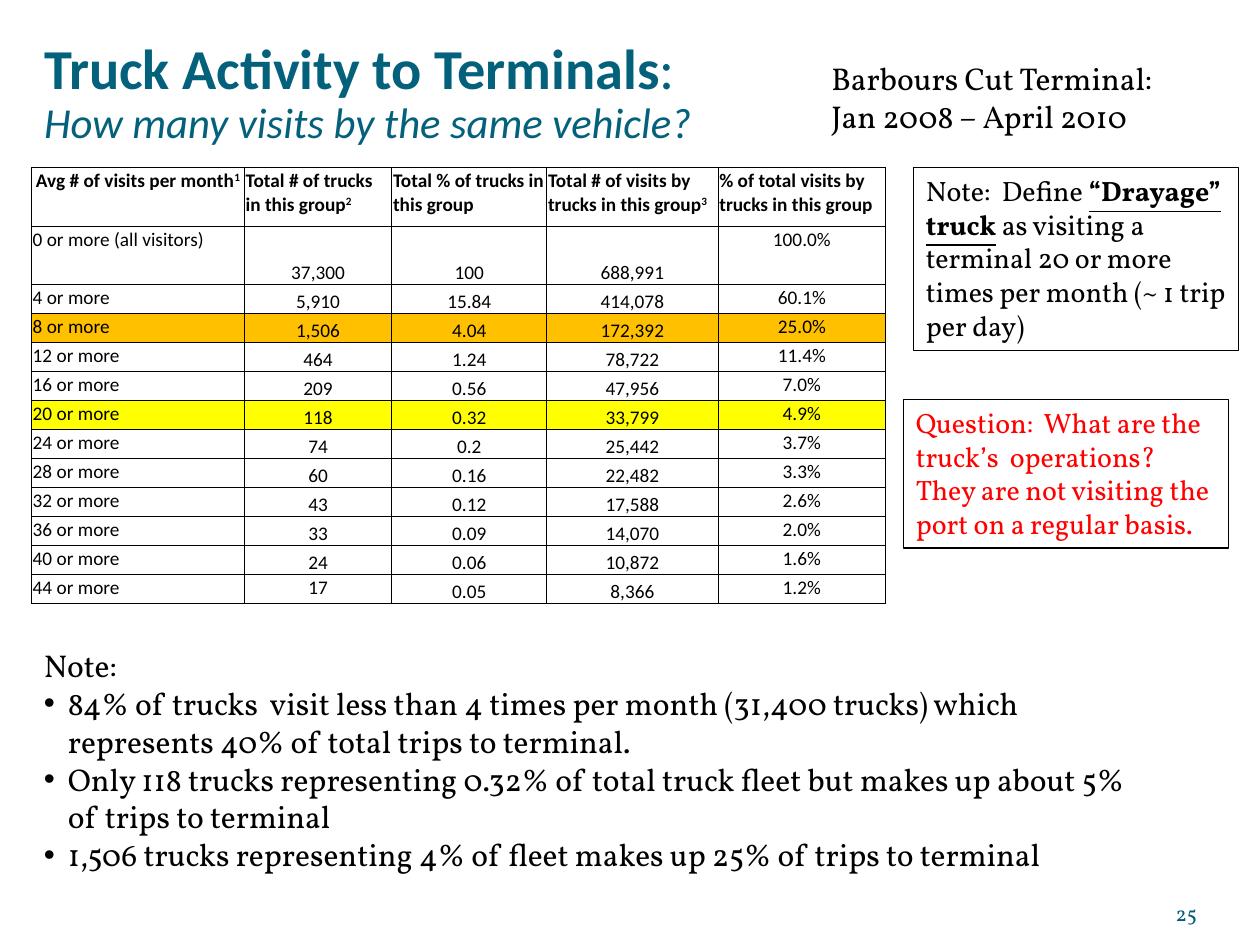
"""Builds the slide on truck activity to terminals."""
import pptx
import pptx.util
import pptx.dml.color
import pptx.enum.text
import pptx.enum.shapes
from lxml import etree
from pptx.oxml.ns import qn

Inches = pptx.util.Inches
Pt = pptx.util.Pt
RGBColor = pptx.dml.color.RGBColor
Align = pptx.enum.text.PP_ALIGN
Anchor = pptx.enum.text.MSO_ANCHOR

BLACK = RGBColor(0x00, 0x00, 0x00)
RED = RGBColor(0xFF, 0x00, 0x00)
TEAL = RGBColor(0x04, 0x61, 0x7B)
BLUE = RGBColor(0x04, 0x5D, 0x75)
AMBER = RGBColor(0xFF, 0xC0, 0x00)
YELLOW = RGBColor(0xFF, 0xFF, 0x00)

HEADS = [
    ("Avg # of visits per month", "1"),
    ("Total # of trucks in this group", "2"),
    ("Total % of trucks in this group", ""),
    ("Total # of visits by trucks in this group", "3"),
    ("% of total visits by trucks in this group", ""),
]
ROWS = [
    ("0 or more (all visitors)", "37,300", "100", "688,991", "100.0%"),
    ("4 or more", "5,910", "15.84", "414,078", "60.1%"),
    ("8 or more", "1,506", "4.04", "172,392", "25.0%"),
    ("12 or more", "464", "1.24", "78,722", "11.4%"),
    ("16 or more", "209", "0.56", "47,956", "7.0%"),
    ("20 or more", "118", "0.32", "33,799", "4.9%"),
    ("24 or more", "74", "0.2", "25,442", "3.7%"),
    ("28 or more", "60", "0.16", "22,482", "3.3%"),
    ("32 or more", "43", "0.12", "17,588", "2.6%"),
    ("36 or more", "33", "0.09", "14,070", "2.0%"),
    ("40 or more", "24", "0.06", "10,872", "1.6%"),
    ("44 or more", "17", "0.05", "8,366", "1.2%"),
]
WIDTHS = [1.69, 1.17, 1.23, 1.36, 1.33]
HEIGHTS = [0.47, 0.46] + [0.23] * 11
MARKS = {"8 or more": AMBER, "20 or more": YELLOW}
FACTS = [
    "84% of trucks  visit less than 4 times per month (31,400 trucks) which "
    "represents 40% of total trips to terminal.",
    "Only 118 trucks representing 0.32% of total truck fleet but makes up "
    "about 5% of trips to terminal",
    "1,506 trucks representing 4% of fleet makes up 25% of trips to terminal",
]


def write(para, text, size=18, font="Vollkorn", color=BLACK, bold=False,
          italic=False, under=False, base=0):
    """Add one formatted run to a paragraph."""
    run = para.add_run()
    run.text = text
    face = run.font
    face.size, face.name = Pt(size), font
    face.bold, face.italic, face.underline = bold, italic, under
    face.color.rgb = color
    if base:
        run._r.get_or_add_rPr().set("baseline", str(base))


class Deck:
    """Holds the style and the current slide."""

    def __init__(self, width, height):
        """Start a deck with one title-only slide."""
        self.file = pptx.Presentation()
        self.file.slide_width = Inches(width)
        self.file.slide_height = Inches(height)
        self.slide = self.file.slides.add_slide(self.file.slide_layouts[5])

    def title(self, box, head, sub):
        """Fill the title with a head and a sub line."""
        shape = self.slide.shapes.title
        shape.left, shape.top, shape.width, shape.height = map(Inches, box)
        frame = shape.text_frame
        frame.auto_size = pptx.enum.text.MSO_AUTO_SIZE.NONE
        frame.vertical_anchor = Anchor.MIDDLE
        para = frame.paragraphs[0]
        para.alignment, para.line_spacing = Align.LEFT, 0.9
        style = dict(font="Calibri", color=TEAL)
        write(para, head, size=32.2, bold=True, **style)
        write(para, ":", size=32.2, **style)
        para.add_line_break()
        write(para, sub, size=24.4, italic=True, **style)

    def text(self, box, lines, **style):
        """Add a text box with one paragraph per line."""
        shape = self.slide.shapes.add_textbox(*map(Inches, box))
        frame = shape.text_frame
        frame.word_wrap = True
        for i, line in enumerate(lines):
            para = frame.add_paragraph() if i else frame.paragraphs[0]
            write(para, line, **style)
        return frame

    def number(self, box, text):
        """Add the page number."""
        frame = self.text(box, [text], size=12, color=BLUE)
        frame.margin_left = frame.margin_right = 0
        frame.margin_top = frame.margin_bottom = 0
        frame.vertical_anchor = Anchor.BOTTOM
        frame.paragraphs[0].alignment = Align.RIGHT

    def points(self, box, head, items):
        """Add a heading with hanging bullets below it."""
        frame = self.text(box, [head, *items])
        for para in frame.paragraphs[1:]:
            props = para._p.get_or_add_pPr()
            props.set("marL", str(Inches(0.19)))
            props.set("indent", str(-Inches(0.19)))
            etree.SubElement(props, qn("a:buFont"), typeface="Arial")
            etree.SubElement(props, qn("a:buChar"), char="•")

    def note(self, box, parts, line=1, **style):
        """Add a framed note made of (text, format) parts."""
        kind = pptx.enum.shapes.MSO_SHAPE.RECTANGLE
        shape = self.slide.shapes.add_shape(kind, *map(Inches, box))
        shape.shadow.inherit = False
        shape.fill.background()
        shape.line.color.rgb, shape.line.width = BLACK, Pt(line)
        frame = shape.text_frame
        frame.word_wrap, frame.vertical_anchor = True, Anchor.TOP
        para = frame.paragraphs[0]
        para.alignment = Align.LEFT
        for text, extra in parts:
            write(para, text, size=16, **style, **extra)

    def cell(self, cell, text, sup="", bold=False, align=Align.LEFT,
             anchor=Anchor.TOP, fill=None):
        """Format one bordered table cell."""
        cell.margin_left = cell.margin_right = cell.margin_top = Inches(0.01)
        cell.margin_bottom = 0
        cell.vertical_anchor = anchor
        para = cell.text_frame.paragraphs[0]
        para.alignment = align
        style = dict(size=11, font="Calibri", bold=bold)
        write(para, text, **style)
        if sup:
            write(para, sup, base=30000, **style)
        props = cell._tc.get_or_add_tcPr()
        for side in "LRTB":
            edge = etree.SubElement(props, qn("a:ln" + side), w=str(Pt(0.5)))
            paint = etree.SubElement(edge, qn("a:solidFill"))
            etree.SubElement(paint, qn("a:srgbClr"), val=str(BLACK))
        if fill:
            cell.fill.solid()
            cell.fill.fore_color.rgb = fill
        else:
            cell.fill.background()

    def table(self, left, top):
        """Add the table of visits."""
        box = (left, top, sum(WIDTHS), sum(HEIGHTS))
        grid = self.slide.shapes.add_table(
            len(HEIGHTS), len(WIDTHS), *map(Inches, box)).table
        grid.first_row = grid.horz_banding = False
        for col, width in zip(grid.columns, WIDTHS):
            col.width = Inches(width)
        for row, height in zip(grid.rows, HEIGHTS):
            row.height = Inches(height)
        for c, (text, sup) in enumerate(HEADS):
            self.cell(grid.cell(0, c), text, sup, bold=True,
                      align=Align.LEFT if c else Align.CENTER)
        for r, row in enumerate(ROWS, 1):
            for c, text in enumerate(row):
                low = c in (1, 2, 3) and (r, c) != (len(ROWS), 1)
                self.cell(grid.cell(r, c), text,
                          align=Align.CENTER if c else Align.LEFT,
                          anchor=Anchor.BOTTOM if low else Anchor.TOP,
                          fill=MARKS.get(row[0]))


def main():
    """Build and save the slide."""
    deck = Deck(10, 7.5)
    deck.number((8.67, 6.95, 0.83, 0.4), "25")
    deck.table(0.25, 1.33)
    deck.title((0.25, 0.25, 9.17, 1), "Truck Activity to Terminals",
               "How many visits by the same vehicle?")
    deck.text((6.5, 0.42, 2.92, 0.71),
              ["Barbours Cut Terminal:", "Jan 2008 – April 2010"])
    deck.points((0.25, 5.08, 9, 1.92), "Note:", FACTS)
    deck.note((7.25, 1.33, 2.58, 1.45), [
        ("Note:  Define ", {}),
        ("“Drayage” truck", dict(bold=True, under=True)),
        (" as visiting a terminal 20 or more times per month "
         "(~ 1 trip per day)", {}),
    ], line=0.75)
    deck.note((7.17, 3.17, 2.58, 1.18), [
        ("Question:  What are the truck’s  operations?  They are not "
         "visiting the port on a regular basis.", {}),
    ], color=RED)
    deck.file.save("out.pptx")


if __name__ == "__main__":
    main()
